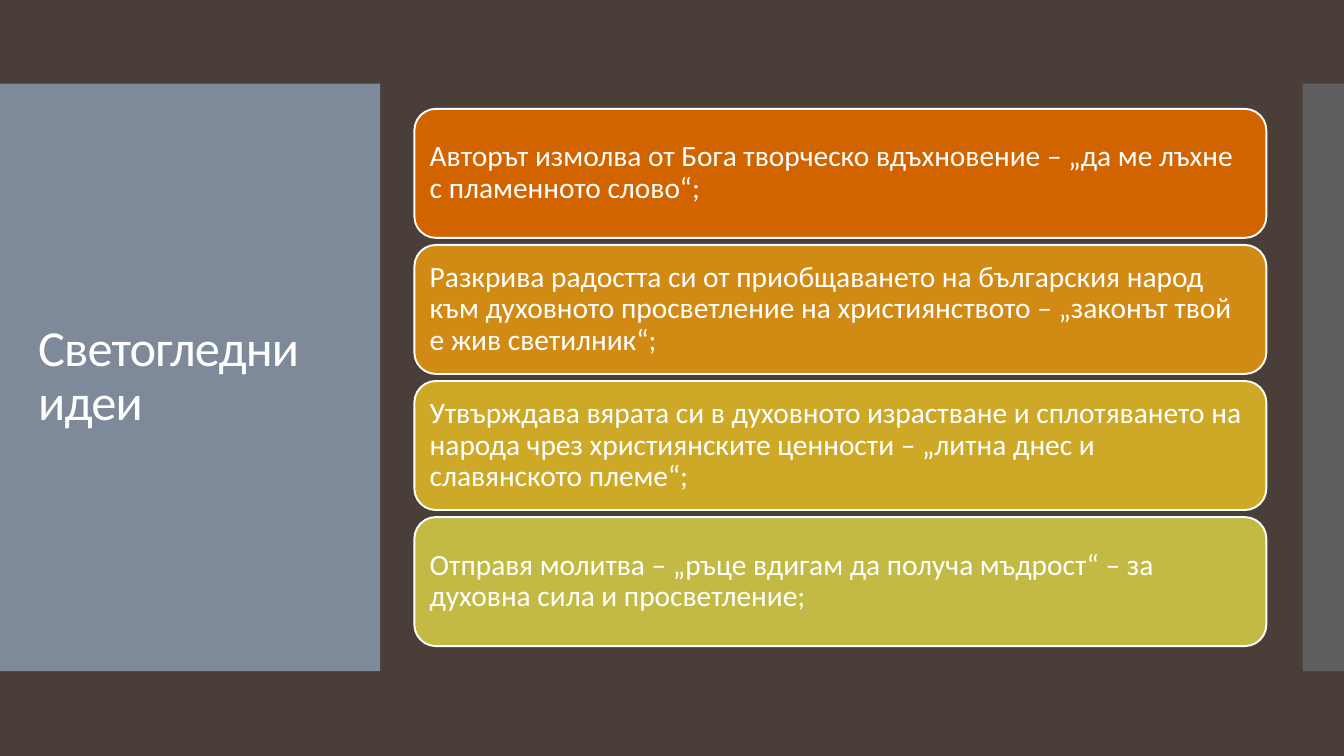
from pptx import Presentation
from pptx.dml.color import RGBColor
from pptx.enum.shapes import MSO_SHAPE as SHAPE
from pptx.enum.text import MSO_ANCHOR, PP_ALIGN
from pptx.oxml.ns import qn
from pptx.util import Inches, Pt
from lxml import etree

BACKGROUND = RGBColor(0x4A, 0x3F, 0x38)
PANEL = RGBColor(0x81, 0x8E, 0x9F)
WHITE = RGBColor(0xFF, 0xFF, 0xFF)
FONT = "Calibri"

TITLE = "Светогледни идеи"
IDEAS = [
    ("Авторът измолва от Бога творческо вдъхновение – „да ме лъхне с пламенното слово“;",
     RGBColor(0xD2, 0x64, 0x00)),
    ("Разкрива радостта си от приобщаването на българския народ към духовното "
     "просветление на християнството – „законът твой е жив светилник“;",
     RGBColor(0xD1, 0x8A, 0x13)),
    ("Утвърждава вярата си в духовното израстване и сплотяването на народа чрез "
     "християнските ценности – „литна днес и славянското племе“;",
     RGBColor(0xCE, 0xA9, 0x28)),
    ("Отправя молитва – „ръце вдигам да получа мъдрост“ – за духовна сила и просветление;",
     RGBColor(0xC3, 0xBA, 0x45)),
]
# (left, width, opacity in percent)
PANELS = [(0, 3.77, 95), (12.92, 0.42, 40)]
PANEL_TOP, PANEL_HEIGHT = 0.83, 5.83
CARD_LEFT, CARD_TOP, CARD_WIDTH, CARD_HEIGHT = 4.11, 1.08, 8.45, 1.28
CARD_STEP = 1.35


def add_box(s, kind, left, top, width, height, fill, opacity=100):
    sp = s.shapes.add_shape(kind, Inches(left), Inches(top), Inches(width), Inches(height))
    sp.shadow.inherit = False
    sp.fill.solid()
    sp.fill.fore_color.rgb = fill
    sp.line.fill.background()
    if opacity < 100:
        color = sp.fill._xPr.find(qn("a:solidFill"))[0]
        etree.SubElement(color, qn("a:alpha")).set("val", str(opacity * 1000))
    return sp


def write_text(sp, text, size, margin, spacing=0):
    """Fill a shape with one left-aligned, vertically centred paragraph."""
    tf = sp.text_frame
    tf.word_wrap = True
    tf.vertical_anchor = MSO_ANCHOR.MIDDLE
    tf.margin_left = tf.margin_right = Inches(margin)
    tf.margin_top = tf.margin_bottom = Inches(margin)
    p = tf.paragraphs[0]
    p.alignment = PP_ALIGN.LEFT
    p.line_spacing = 0.9
    r = p.add_run()
    r.text = text
    r.font.name = FONT
    r.font.size = Pt(size)
    r.font.color.rgb = WHITE
    if spacing:
        r.font._element.set("spc", str(round(spacing * 100)))


def main():
    prs = Presentation()
    prs.slide_width, prs.slide_height = Inches(13.33), Inches(7.5)
    s = prs.slides.add_slide(prs.slide_layouts[6])
    s.background.fill.solid()
    s.background.fill.fore_color.rgb = BACKGROUND

    for left, width, opacity in PANELS:
        add_box(s, SHAPE.RECTANGLE, left, PANEL_TOP, width, PANEL_HEIGHT, PANEL, opacity)

    title = s.shapes.add_textbox(Inches(0.28), Inches(1.23), Inches(3.22), Inches(5.03))
    write_text(title, TITLE, size=36, margin=0.1, spacing=-0.6)

    for i, (text, color) in enumerate(IDEAS):
        card = add_box(s, SHAPE.ROUNDED_RECTANGLE, CARD_LEFT, CARD_TOP + i * CARD_STEP,
                       CARD_WIDTH, CARD_HEIGHT, color)
        card.line.color.rgb = WHITE
        card.line.width = Pt(1.35)
        write_text(card, text, size=21, margin=0.09)

    prs.save("out.pptx")


if __name__ == "__main__":
    main()
